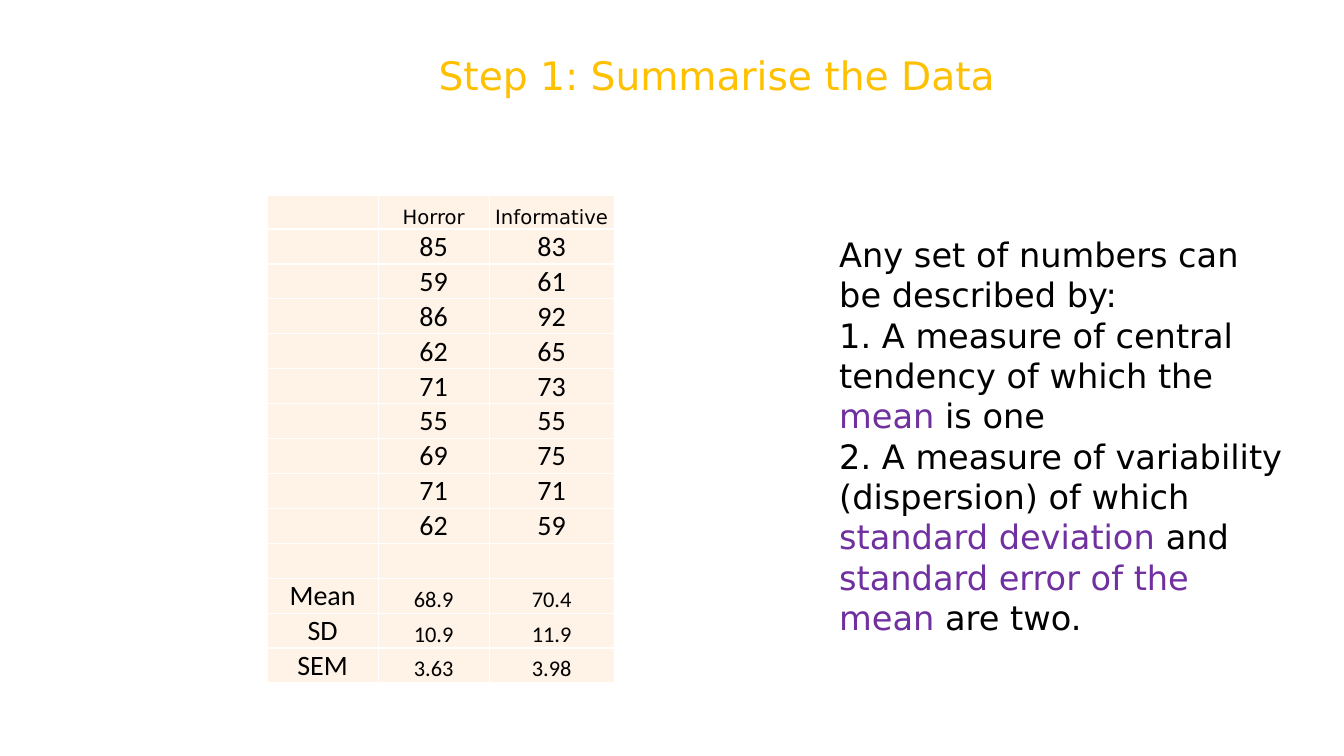
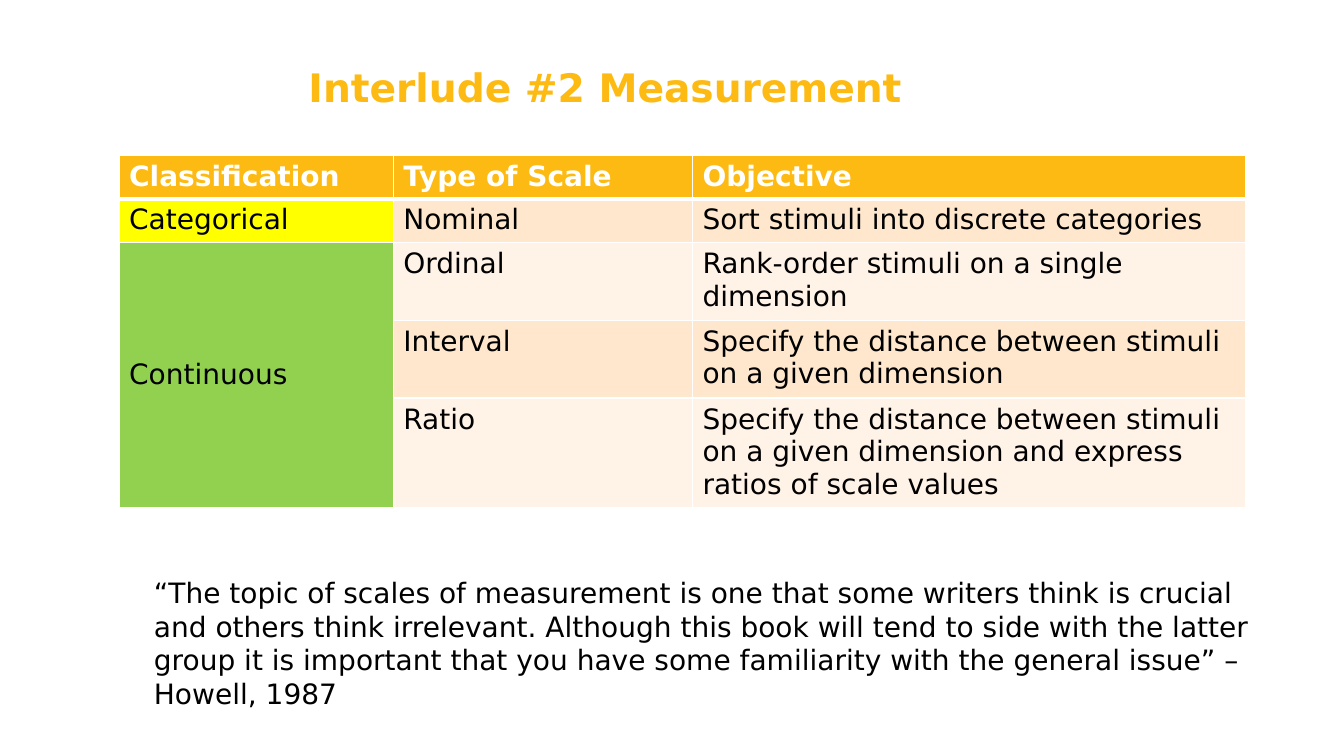
from lxml.etree import SubElement
from pptx import Presentation
from pptx.dml.color import RGBColor
from pptx.enum.text import MSO_ANCHOR, MSO_AUTO_SIZE, PP_ALIGN
from pptx.oxml.ns import qn
from pptx.util import Cm, Pt

SANS = "DejaVu Sans"
BLACK, WHITE, PURPLE = "000000", "FFFFFF", "7030A0"
GOLD, AMBER = "FFC000", "FDBA12"
CREAM, PEACH = "FFF3E7", "FEE7CC"
YELLOW, GREEN = "FFFF00", "92D050"


def write_text(frame, *paragraphs, size=20, font=SANS, color=BLACK, bold=False,
               align=PP_ALIGN.LEFT, anchor=MSO_ANCHOR.TOP, spacing=None, wrap=True):
    """Each paragraph is a list of runs: plain text or a (text, color) pair."""
    frame.word_wrap = wrap
    frame.vertical_anchor = anchor
    for number, runs in enumerate(paragraphs):
        paragraph = frame.add_paragraph() if number else frame.paragraphs[0]
        paragraph.alignment = align
        paragraph.line_spacing = spacing
        for part in runs:
            text, run_color = (part, color) if isinstance(part, str) else part
            run = paragraph.add_run()
            run.text = text
            run.font.name, run.font.size, run.font.bold = font, Pt(size), bold
            run.font.color.rgb = RGBColor.from_string(run_color)


def style_cell(cell, fill, bottom=1):
    """White borders (widths in points) and a solid fill."""
    properties = cell._tc.get_or_add_tcPr()
    for side, width in (("L", 1), ("R", 1), ("T", 1), ("B", bottom)):
        line = SubElement(properties, qn(f"a:ln{side}"), w=str(Pt(width)))
        SubElement(SubElement(line, qn("a:solidFill")), qn("a:srgbClr"), val=WHITE)
    cell.fill.solid()
    cell.fill.fore_color.rgb = RGBColor.from_string(fill)


presentation = Presentation()
presentation.slide_width, presentation.slide_height = Cm(33.87), Cm(19.05)

# Contents: title, its box and format; table place, columns and rows; body text
scores = [
    ("", "Horror", "Informative"),
    ("", "85", "83"), ("", "59", "61"), ("", "86", "92"),
    ("", "62", "65"), ("", "71", "73"), ("", "55", "55"),
    ("", "69", "75"), ("", "71", "71"), ("", "62", "59"),
    ("", "", ""),
    ("Mean", "68.9", "70.4"), ("SD", "10.9", "11.9"), ("SEM", "3.63", "3.98"),
]
scales = [
    ("Classification", "Type of Scale", "Objective"),
    ("Categorical", "Nominal", "Sort stimuli into discrete categories"),
    ("Continuous", "Ordinal", "Rank-order stimuli on a single dimension"),
    ("", "Interval", "Specify the distance between stimuli on a given dimension"),
    ("", "Ratio", "Specify the distance between stimuli on a given dimension "
                  "and express ratios of scale values"),
]
summary = [
    ["Any set of numbers can be described by:"],
    ["1. A measure of central tendency of which the ", ("mean", PURPLE), " is one"],
    ["2. A measure of variability (dispersion) of which ",
     ("standard deviation ", PURPLE), "and ",
     ("standard error of the mean ", PURPLE), "are two."],
]
quote = [[
    "“The topic of scales of measurement is one that some writers think is crucial "
    "and others think irrelevant. Although this book will tend to side with the latter "
    "group it is important that you have some familiarity with the general issue” – "
    "Howell, 1987"
]]
pages = [
    dict(title="Step 1: Summarise the Data", title_box=(10.8, 1.17, 14.94, 1.45),
         title_format=dict(color=GOLD, wrap=False),
         rows=scores, corner=(6.73, 4.93), widths=(2.8, 2.8, 3.15),
         heights=[0.84] + [0.88] * 13,
         body=summary, body_box=(20.9, 5.77, 11.73, 10.52), body_size=24),
    dict(title="Interlude #2 Measurement", title_box=(7.52, 1.6, 22.86, 2.72),
         title_format=dict(color=AMBER, bold=True, spacing=0.9),
         rows=scales, corner=(3, 3.91), widths=(6.91, 7.54, 13.94),
         heights=[1.1, 1.1, 1.96, 1.96, 2.77],
         body=quote, body_box=(3.63, 14.38, 28.52, 3.68), body_size=20),
]

# Title, empty table and body text of each slide
tables = []
for page in pages:
    slide = presentation.slides.add_slide(presentation.slide_layouts[5])
    title = slide.shapes.title
    title.left, title.top, title.width, title.height = map(Cm, page["title_box"])
    title.text_frame.auto_size = MSO_AUTO_SIZE.NONE
    write_text(title.text_frame, [page["title"]], size=28, **page["title_format"])

    widths, heights = page["widths"], page["heights"]
    table = slide.shapes.add_table(
        len(heights), len(widths), *map(Cm, page["corner"]),
        Cm(sum(widths)), Cm(sum(heights))).table
    table.horz_banding = False
    for column, width in zip(table.columns, widths):
        column.width = Cm(width)
    for row, height in zip(table.rows, heights):
        row.height = Cm(height)
    tables.append(table)

    body = slide.shapes.add_textbox(*map(Cm, page["body_box"]))
    write_text(body.text_frame, *page["body"], size=page["body_size"])

score_table, scale_table = tables

# Score table: small header, large scores and labels, medium statistics
score_table.first_row = False
for row_number, row in enumerate(scores):
    for column_number, text in enumerate(row):
        cell = score_table.cell(row_number, column_number)
        style_cell(cell, CREAM)
        cell.margin_left = cell.margin_right = cell.margin_top = cell.margin_bottom = 0
        cell.vertical_anchor = MSO_ANCHOR.BOTTOM
        is_header = row_number == 0
        is_statistic = row_number > 10 and column_number > 0
        if text:
            write_text(cell.text_frame, [text],
                       size=14 if is_header else 16 if is_statistic else 20,
                       font=SANS if is_header else "Calibri",
                       align=PP_ALIGN.CENTER, anchor=MSO_ANCHOR.BOTTOM)
            cell.vertical_anchor = MSO_ANCHOR.BOTTOM

# Scale table: banded rows, with the classification column colour-coded
scale_table.cell(2, 0).merge(scale_table.cell(4, 0))
for row_number, row in enumerate(scales):
    for column_number, text in enumerate(row):
        cell = scale_table.cell(row_number, column_number)
        is_header = row_number == 0
        if is_header:
            fill = AMBER
        elif column_number == 0:
            fill = YELLOW if row_number == 1 else GREEN
        else:
            fill = PEACH if row_number % 2 else CREAM
        style_cell(cell, fill, bottom=3 if is_header else 1)
        if text:
            write_text(cell.text_frame, [text], bold=is_header,
                       color=WHITE if is_header else BLACK)
scale_table.cell(2, 0).vertical_anchor = MSO_ANCHOR.MIDDLE

presentation.save("out.pptx")
